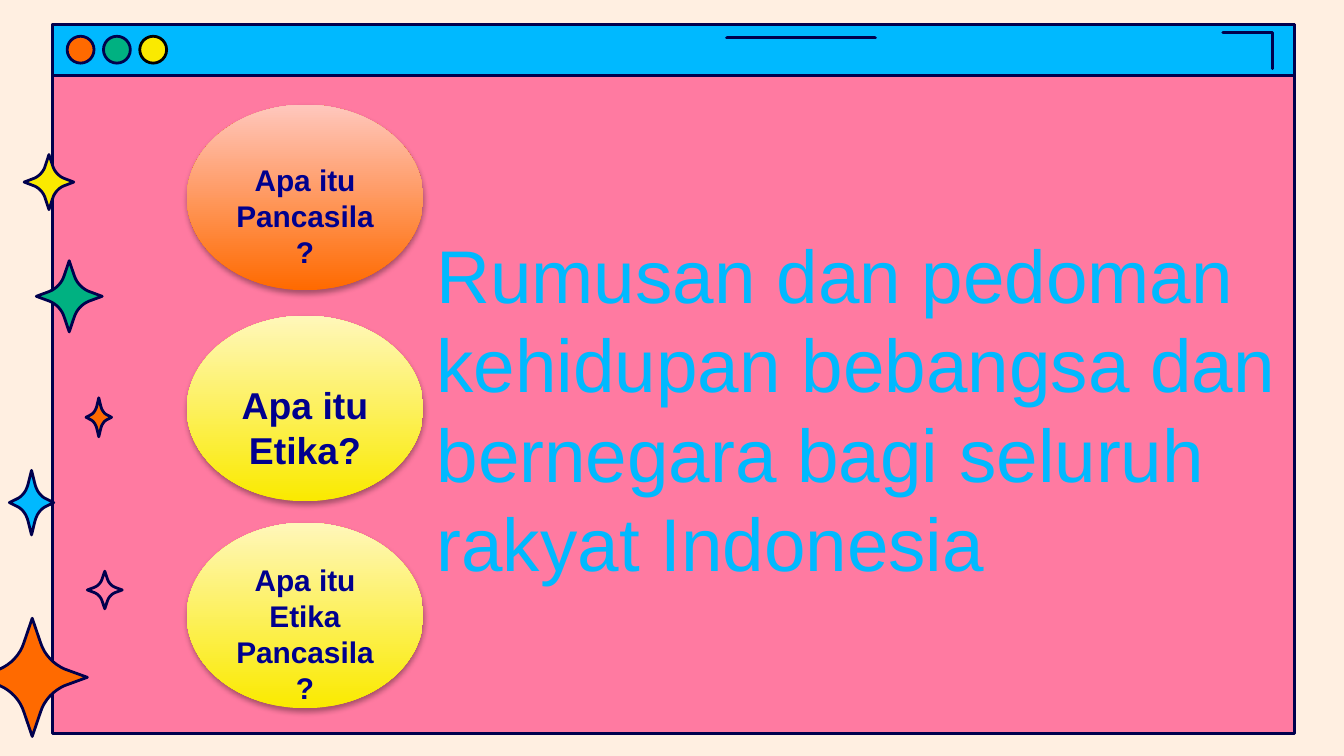
from lxml import etree
from pptx import Presentation
from pptx.dml.color import RGBColor
from pptx.enum.shapes import MSO_CONNECTOR, MSO_SHAPE
from pptx.enum.text import MSO_ANCHOR, PP_ALIGN
from pptx.oxml.ns import qn
from pptx.util import Inches, Pt

RECTANGLE, OVAL = MSO_SHAPE.RECTANGLE, MSO_SHAPE.OVAL
STRAIGHT = MSO_CONNECTOR.STRAIGHT
MIDDLE, CENTER = MSO_ANCHOR.MIDDLE, PP_ALIGN.CENTER

COLOURS = {
    "cream": "FFEFE1", "pink": "FF7AA1", "blue": "00B9FF", "ink": "00004D",
    "green": "00B181", "yellow": "FAEA00", "orange": "FF6A00", "black": "000000",
    "peach": "FFC7BD", "pale_yellow": "FFF7BA", "navy": "00008E",
}
SPARKLE_CURVE = [(0.15, -0.59), (0.22, -0.38), (0.39, -0.22), (0.59, -0.14)]
CURVE_STEPS = 8


def colour(name):
    """Return the named palette colour."""
    return RGBColor.from_string(COLOURS[name])


def paint(shape, fill, line="ink", width=1.5):
    """Give a shape a flat fill and outline without a shadow."""
    shape.shadow.inherit = False
    if fill:
        shape.fill.solid()
        shape.fill.fore_color.rgb = colour(fill)
    else:
        shape.fill.background()
    shape.line.color.rgb = colour(line)
    shape.line.width = Pt(width)


def add_shape(slide, kind, left, top, width, height):
    """Add a preset shape measured in inches."""
    return slide.shapes.add_shape(
        kind, Inches(left), Inches(top), Inches(width), Inches(height))


def add_outline(slide, points, close):
    """Build a freeform through points measured in inches."""
    (x, y), *others = [(Inches(px), Inches(py)) for px, py in points]
    builder = slide.shapes.build_freeform(x, y, scale=1.0)
    builder.add_line_segments(others, close=close)
    return builder.convert_to_shape()


def round_caps(shape):
    """Round the ends of a stroke."""
    shape.line._get_or_add_ln().set("cap", "rnd")


def add_window(slide, left, top, width, height):
    """Draw the browser window with its title bar, buttons and marks."""
    bar_height, button = 0.38, 0.2
    paint(add_shape(slide, RECTANGLE, left, top, width, height), "pink")
    paint(add_shape(slide, RECTANGLE, left, top, width, bar_height), "blue")

    right = left + width - 0.16
    corner = add_outline(slide, [(right - 0.37, top + 0.06), (right, top + 0.06),
                                 (right, top + 0.33)], close=False)
    paint(corner, None, width=1.75)
    round_caps(corner)

    handle_y = Inches(top + 0.1)
    handle = slide.shapes.add_connector(
        STRAIGHT, Inches(left + 5.02), handle_y, Inches(left + 6.12), handle_y)
    handle.line.color.rgb = colour("ink")
    handle.line.width = Pt(2)
    round_caps(handle)
    etree.SubElement(handle._element.spPr, qn("a:effectLst"))

    buttons = [("orange", "ink"), ("green", "ink"), ("yellow", "black")]
    for index, (fill, line) in enumerate(buttons):
        paint(add_shape(slide, OVAL, left + 0.11 + index * 0.27, top + 0.09,
                        button, button), fill, line)


def bezier(start, first, second, end, t):
    """Return the point at t on a cubic curve."""
    return tuple((1 - t) ** 3 * a + 3 * (1 - t) ** 2 * t * b
                 + 3 * (1 - t) * t ** 2 * c + t ** 3 * d
                 for a, b, c, d in zip(start, first, second, end))


def add_sparkle(slide, left, top, width, height, fill):
    """Draw a four-pointed sparkle that fills the given box."""
    arc = [bezier(*SPARKLE_CURVE, step / CURVE_STEPS) for step in range(CURVE_STEPS + 1)]
    top_right = [(0, -1)] + arc + [(1, 0)]
    right_half = top_right + [(x, -y) for x, y in top_right[-2::-1]]
    star = right_half + [(-x, y) for x, y in right_half[-2:0:-1]]
    points = [(left + width * (1 + x) / 2, top + height * (1 + y) / 2) for x, y in star]
    paint(add_outline(slide, points, close=True), fill)


def add_soft_shadow(shape):
    """Put a soft dark shadow below a shape."""
    shape.shadow.inherit = False
    effects = shape._element.spPr.find(qn("a:effectLst"))
    shadow = etree.SubElement(effects, qn("a:outerShdw"), blurRad=str(Pt(3.1)),
                              dist=str(Pt(1.8)), dir="5400000", rotWithShape="0")
    shade = etree.SubElement(shadow, qn("a:srgbClr"), val=COLOURS["black"])
    etree.SubElement(shade, qn("a:alpha"), val="35000")


def write_lines(frame, lines, font, align=None):
    """Write paragraphs with one font format."""
    for index, line in enumerate(lines):
        paragraph = frame.paragraphs[0] if index == 0 else frame.add_paragraph()
        paragraph.alignment = align
        run = paragraph.add_run()
        run.text = line
        run.font.color.rgb = colour(font["colour"])
        for name in ("name", "size", "bold"):
            setattr(run.font, name, font[name])


def add_question(slide, left, top, width, height, lines, size, base, tint):
    """Draw a gradient ellipse holding a question."""
    bubble = add_shape(slide, OVAL, left, top, width, height)
    bubble.fill.gradient()
    bubble.fill.gradient_angle = 90
    for stop, name, position in zip(bubble.fill.gradient_stops, (base, tint), (0, 1)):
        stop.color.rgb = colour(name)
        stop.position = position
    bubble.line.fill.background()
    add_soft_shadow(bubble)
    frame = bubble.text_frame
    frame.word_wrap = True
    frame.vertical_anchor = MIDDLE
    frame.margin_top = Inches(0.32)
    font = {"name": "Arial", "size": Pt(size), "bold": True, "colour": "navy"}
    write_lines(frame, lines, font, CENTER)


def add_answer(slide, left, top, width, height):
    """Place the large answer text."""
    box = slide.shapes.add_textbox(Inches(left), Inches(top), Inches(width), Inches(height))
    box.text_frame.word_wrap = True
    font = {"name": "Arial", "size": Pt(40), "bold": False, "colour": "blue"}
    write_lines(box.text_frame, ["Rumusan dan pedoman kehidupan bebangsa dan "
                                 "bernegara bagi seluruh rakyat Indonesia"], font)


def main():
    """Build and save the slide."""
    deck = Presentation()
    deck.slide_width = Inches(10)
    deck.slide_height = deck.slide_width * 9 // 16
    slide = deck.slides.add_slide(deck.slide_layouts[6])
    slide.background.fill.solid()
    slide.background.fill.fore_color.rgb = colour("cream")

    add_window(slide, 0.39, 0.18, 9.24, 5.28)

    sparkles = [
        (0.07, 3.5, 0.33, 0.48, "blue"),
        (0.65, 4.25, 0.26, 0.28, None),
        (-0.17, 4.6, 0.82, 0.88, "orange"),
        (0.27, 1.94, 0.49, 0.53, "green"),
        (0.64, 2.96, 0.19, 0.29, "orange"),
        (0.18, 1.15, 0.37, 0.41, "yellow"),
    ]
    for sparkle in sparkles:
        add_sparkle(slide, *sparkle)

    questions = [
        (0.78, ["Apa itu Pancasila?"], 16, "orange", "peach"),
        (2.35, ["Apa itu Etika?"], 20, "yellow", "pale_yellow"),
        (3.89, ["Apa itu", "Etika Pancasila?"], 16, "yellow", "pale_yellow"),
    ]
    for top, *content in questions:
        add_question(slide, 1.39, top, 1.76, 1.38, *content)

    add_answer(slide, 3.15, 1.65, 7.06, 2.79)
    deck.save("out.pptx")


if __name__ == "__main__":
    main()
